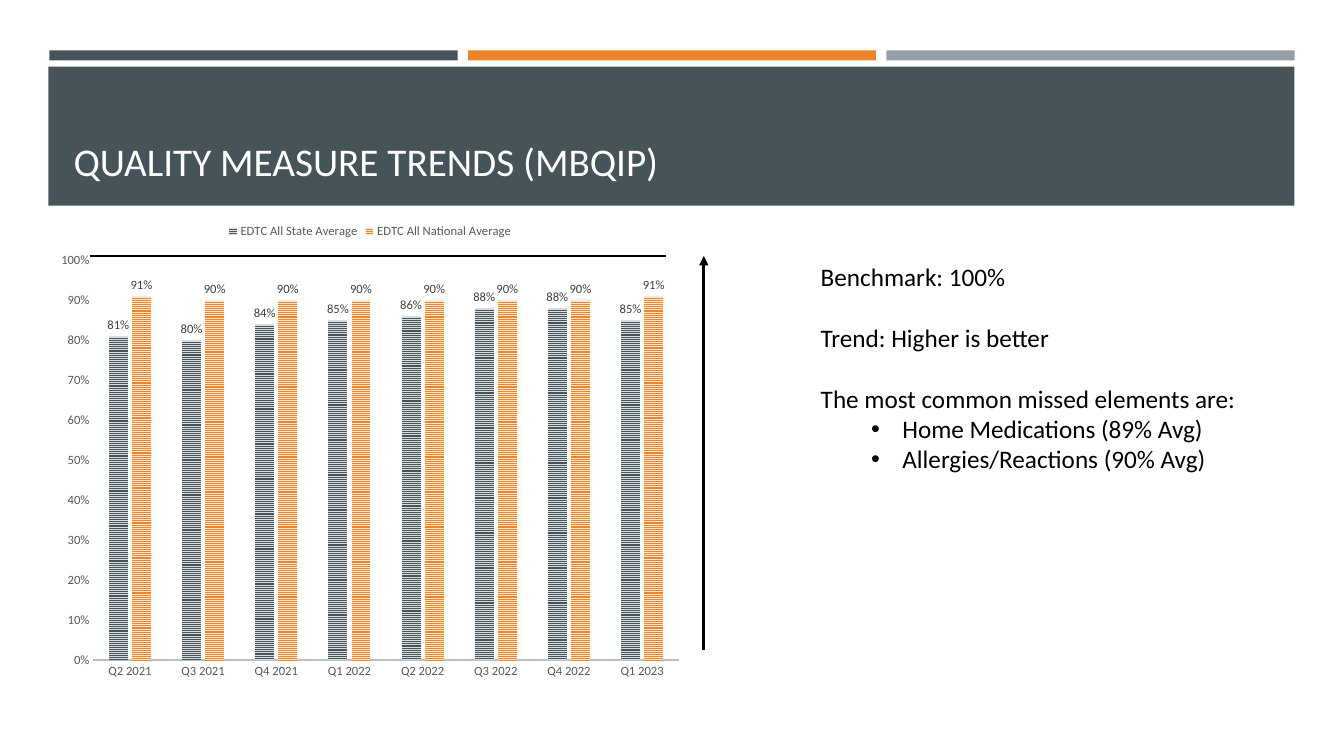
from dataclasses import dataclass

from lxml.etree import SubElement
from pptx import Presentation
from pptx.chart.data import CategoryChartData
from pptx.dml.color import RGBColor
from pptx.enum.chart import (XL_CHART_TYPE, XL_LABEL_POSITION,
                             XL_LEGEND_POSITION, XL_TICK_MARK)
from pptx.enum.dml import MSO_PATTERN
from pptx.enum.shapes import MSO_CONNECTOR, MSO_SHAPE
from pptx.enum.text import MSO_ANCHOR, MSO_AUTO_SIZE, PP_ALIGN
from pptx.oxml import parse_xml
from pptx.oxml.ns import nsdecls, qn
from pptx.util import Inches, Pt

FONT = "Calibri"
SLATE, ORANGE, GRAY = "465359", "ED8428", "969FA7"


@dataclass
class Bar:
    left: float
    top: float
    width: float
    height: float
    color: str


@dataclass
class Measure:
    name: str
    values: tuple
    fore: str
    back: str


@dataclass
class Line:
    start: tuple
    end: tuple
    weight: float
    arrow: bool = False


@dataclass
class Note:
    text: str
    gap_before: float = 0
    bullet: bool = False


BARS = [Bar(0.49 + 4.15 * i, 0.5, 4.05, 0.1, color)
        for i, color in enumerate((SLATE, ORANGE, GRAY))]
BARS.append(Bar(0.48, 0.66, 12.36, 1.38, SLATE))
QUARTERS = ["Q2 2021", "Q3 2021", "Q4 2021", "Q1 2022",
            "Q2 2022", "Q3 2022", "Q4 2022", "Q1 2023"]
MEASURES = [
    Measure("EDTC All State Average",
            (0.81, 0.8, 0.84, 0.85, 0.86, 0.88, 0.88, 0.85), SLATE, "D8DDE0"),
    Measure("EDTC All National Average",
            (0.91, 0.9, 0.9, 0.9, 0.9, 0.9, 0.9, 0.91), ORANGE, "FBE6D4"),
]
LINES = [Line((0.89, 2.54), (6.61, 2.54), 1.5),
         Line((6.98, 6.45), (6.98, 2.54), 2.25, arrow=True)]
NOTES = [
    Note("Benchmark: 100%"),
    Note("Trend: Higher is better", 22),
    Note("The most common missed elements are:", 22),
    Note("Home Medications (89% Avg)", bullet=True),
    Note("Allergies/Reactions (90% Avg)", bullet=True),
]


def rgb(color: str) -> RGBColor:
    return RGBColor.from_string(color)


def set_font(font, size: float, color: str) -> None:
    font.name, font.size = FONT, Pt(size)
    font.color.rgb = rgb(color)


def place(sp, left: float, top: float, width: float, height: float) -> None:
    sp.left, sp.top = Inches(left), Inches(top)
    sp.width, sp.height = Inches(width), Inches(height)


def add_bar(s, bar: Bar) -> None:
    sp = s.shapes.add_shape(MSO_SHAPE.RECTANGLE, Inches(bar.left), Inches(bar.top),
                            Inches(bar.width), Inches(bar.height))
    sp.shadow.inherit = False
    sp.fill.solid()
    sp.fill.fore_color.rgb = rgb(bar.color)
    sp.line.fill.background()


def add_line(s, line: Line) -> None:
    sp = s.shapes.add_connector(MSO_CONNECTOR.STRAIGHT,
                                *map(Inches, line.start + line.end))
    sp.line.color.rgb = rgb("000000")
    sp.line.width = Pt(line.weight)
    if line.arrow:
        SubElement(sp.line._get_or_add_ln(), qn("a:tailEnd"), type="triangle")
    SubElement(sp._element.spPr, qn("a:effectLst"))


def fill_title(s) -> None:
    title = s.shapes.title
    place(title, 0.63, 0.8, 12.06, 1.08)
    title.element.getparent().append(title.element)  # in front of the band
    tf = title.text_frame
    tf.vertical_anchor = MSO_ANCHOR.BOTTOM
    tf.auto_size = MSO_AUTO_SIZE.NONE
    p = tf.paragraphs[0]
    p.alignment = PP_ALIGN.LEFT
    r = p.add_run()
    r.text = "QUALITY MEASURE TRENDS (MBQIP)"
    set_font(r.font, 28, "FFFFFF")


def fill_notes(s) -> None:
    body = s.placeholders[1]
    place(body, 8.04, 2.54, 4.81, 2.83)
    tf = body.text_frame
    tf.auto_size = MSO_AUTO_SIZE.NONE
    for i, note in enumerate(NOTES):
        p = tf.add_paragraph() if i else tf.paragraphs[0]
        p.space_before = Pt(note.gap_before)
        pPr = p._p.get_or_add_pPr()
        if note.bullet:
            p.level = 1
            pPr.set("marL", str(Inches(0.81)))
            pPr.set("indent", str(Inches(-0.31)))
            SubElement(pPr, qn("a:buFont"), typeface="Arial")
            SubElement(pPr, qn("a:buChar"), char="•")
        else:
            pPr.set("marL", "0")
            pPr.set("indent", "0")
            SubElement(pPr, qn("a:buNone"))
        r = p.add_run()
        r.text = note.text
        set_font(r.font, 18, "000000")


def set_plot_area(chart, x: float, y: float, w: float, h: float) -> None:
    """Fix the inner plot area, in fractions of the chart."""
    area = chart._chartSpace.chart.plotArea
    for old in area.findall(qn("c:layout")):
        area.remove(old)
    sizes = "".join(f'<c:{tag} val="{value}"/>'
                    for tag, value in zip("xywh", (x, y, w, h)))
    area.insert(0, parse_xml(
        f'<c:layout {nsdecls("c")}><c:manualLayout><c:layoutTarget val="inner"/>'
        f'<c:xMode val="edge"/><c:yMode val="edge"/>{sizes}'
        '</c:manualLayout></c:layout>'))


def add_trend_chart(s) -> None:
    data = CategoryChartData(number_format="0%")
    data.categories = QUARTERS
    for measure in MEASURES:
        data.add_series(measure.name, measure.values)
    chart = s.shapes.add_chart(XL_CHART_TYPE.COLUMN_CLUSTERED, Inches(0.48),
                               Inches(2.11), Inches(6.38), Inches(4.72), data).chart
    set_font(chart.font, 10, "000000")
    chart.has_title = False
    chart.has_legend = True
    chart.legend.position = XL_LEGEND_POSITION.TOP
    chart.legend.include_in_layout = False
    set_font(chart.legend.font, 9, "595959")

    for axis in (chart.category_axis, chart.value_axis):
        axis.major_tick_mark = axis.minor_tick_mark = XL_TICK_MARK.NONE
        axis.has_major_gridlines = False
        set_font(axis.tick_labels.font, 9, "595959")
    chart.category_axis.format.line.color.rgb = rgb("BFBFBF")
    chart.category_axis.format.line.width = Pt(1.5)
    values = chart.value_axis
    values.format.line.fill.background()
    values.minimum_scale, values.maximum_scale, values.major_unit = 0, 1, 0.1
    values.tick_labels.number_format = "0%"
    values.tick_labels.number_format_is_linked = False

    plot = chart.plots[0]
    plot.gap_width, plot.overlap, plot.vary_by_categories = 164, -22, False
    for series, measure in zip(plot.series, MEASURES):
        fill = series.format.fill
        fill.patterned()
        fill.pattern = MSO_PATTERN.NARROW_HORIZONTAL
        fill.fore_color.rgb = rgb(measure.fore)
        fill.back_color.rgb = rgb(measure.back)
        labels = series.data_labels
        labels.show_value = True
        labels.position = XL_LABEL_POSITION.OUTSIDE_END
        labels.number_format = "0%"
        labels.number_format_is_linked = False
        set_font(labels.font, 9, "404040")
    set_plot_area(chart, 0.07, 0.1, 0.91, 0.84)


def main() -> None:
    prs = Presentation()
    prs.slide_width, prs.slide_height = Inches(13.33), Inches(7.5)
    s = prs.slides.add_slide(prs.slide_layouts[1])
    for bar in BARS:
        add_bar(s, bar)
    fill_title(s)
    add_trend_chart(s)
    for line in LINES:
        add_line(s, line)
    fill_notes(s)
    prs.save("out.pptx")


if __name__ == "__main__":
    main()
